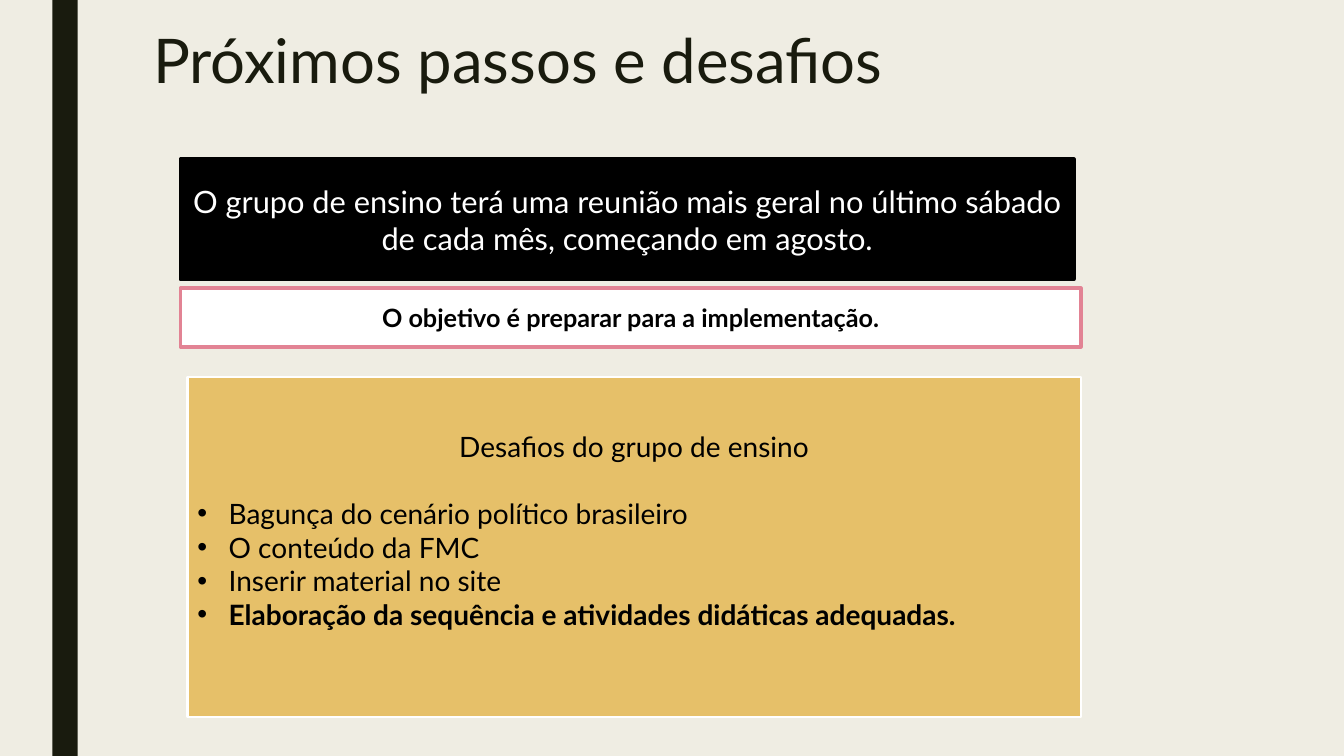
from lxml import etree
from pptx import Presentation
from pptx.dml.color import RGBColor
from pptx.enum.shapes import MSO_SHAPE
from pptx.enum.text import MSO_ANCHOR, PP_ALIGN
from pptx.oxml.ns import qn
from pptx.util import Inches, Pt

RECTANGLE = MSO_SHAPE.RECTANGLE
TOP, MIDDLE = MSO_ANCHOR.TOP, MSO_ANCHOR.MIDDLE
LEFT, CENTER, JUSTIFY = PP_ALIGN.LEFT, PP_ALIGN.CENTER, PP_ALIGN.JUSTIFY

FONT = "Lato"
COLORS = {
    "background": "EFEDE3",
    "dark": "191B0E",
    "black": "000000",
    "white": "FFFFFF",
    "pink": "E28394",
    "gold": "E6C069",
}


def add_box(position, fill, line=None, line_width=0):
    shape = slide.shapes.add_shape(RECTANGLE, *map(Inches, position))
    shape.shadow.inherit = False
    shape.fill.solid()
    shape.fill.fore_color.rgb = RGBColor.from_string(COLORS[fill])
    if line:
        shape.line.color.rgb = RGBColor.from_string(COLORS[line])
        shape.line.width = Pt(line_width)
    else:
        shape.line.fill.background()
    return shape


def write_text(shape, lines, size, color, anchor=MIDDLE):
    """Each line is (text, bold, paragraph format values)."""
    frame = shape.text_frame
    frame.word_wrap = True
    frame.vertical_anchor = anchor
    for index, (text, bold, values) in enumerate(lines):
        paragraph = frame.add_paragraph() if index else frame.paragraphs[0]
        for name, value in values.items():
            setattr(paragraph, name, value)
        run = paragraph.add_run()
        run.text = text
        font = {"name": FONT, "size": Pt(size), "bold": bold}
        for name, value in font.items():
            setattr(run.font, name, value)
        run.font.color.rgb = RGBColor.from_string(COLORS[color])


# Slide and background
presentation = Presentation()
presentation.slide_width = Inches(13.33)
presentation.slide_height = Inches(7.5)
slide = presentation.slides.add_slide(presentation.slide_layouts[6])
slide.background.fill.solid()
slide.background.fill.fore_color.rgb = RGBColor.from_string(COLORS["background"])

# Side band and title
add_box((0.52, 0, 0.25, 7.5), "dark")
title = slide.shapes.add_textbox(*map(Inches, (1.42, 0.26, 10.5, 1.62)))
title_format = {"alignment": LEFT, "line_spacing": 0.89}
write_text(title, [("Próximos passos e desafios", False, title_format)], 44, "dark", TOP)

# Meeting and its goal
centered = {"alignment": CENTER}
meeting = add_box((1.79, 1.58, 8.86, 1.19), "black", "black", 2.75)
meeting_text = (
    "O grupo de ensino terá uma reunião mais geral no último sábado "
    "de cada mês, começando em agosto."
)
write_text(meeting, [(meeting_text, False, centered)], 22, "white")
goal = add_box((1.79, 2.86, 8.93, 0.58), "white", "pink", 2.75)
goal_text = "O objetivo é preparar para a implementação."
write_text(goal, [(goal_text, True, centered)], 18, "black")

# Challenges: heading and bulleted list, set slightly above the middle
challenges = add_box((1.86, 3.74, 8.86, 3.37), "gold", "white", 1.5)
challenges.text_frame.margin_bottom = Inches(0.38)
justified = {"alignment": JUSTIFY}
heading_format = {"alignment": CENTER, "space_after": Pt(24)}
write_text(challenges, [
    ("Desafios do grupo de ensino", False, heading_format),
    ("Bagunça do cenário político brasileiro", False, justified),
    ("O conteúdo da FMC", False, justified),
    ("Inserir material no site", False, justified),
    ("Elaboração da sequência e atividades didáticas adequadas.", True, justified),
], 20, "black")
for paragraph in challenges.text_frame.paragraphs[1:]:
    properties = paragraph._p.get_or_add_pPr()
    properties.set("marL", str(Inches(0.31)))
    properties.set("indent", str(Inches(-0.31)))
    etree.SubElement(properties, qn("a:buFont"), typeface="Arial")
    etree.SubElement(properties, qn("a:buChar"), char="•")

presentation.save("out.pptx")
